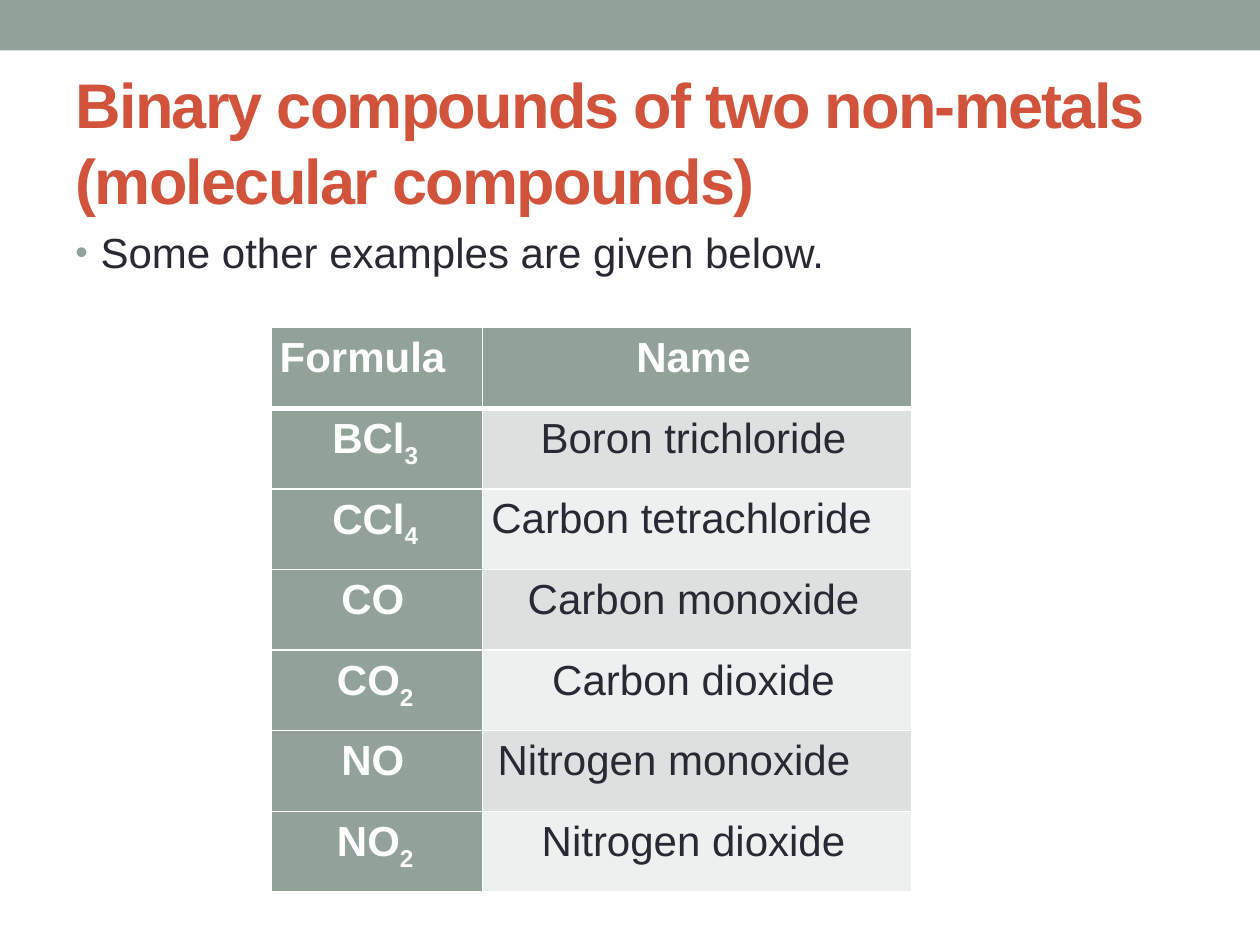
from pptx import Presentation
from pptx import util as u
from pptx.dml.color import RGBColor
from pptx.enum import shapes, text
from pptx.oxml import parse_xml
from pptx.oxml.ns import nsdecls

COLORS = {
    "sage": "93A299",
    "rust": "D2533C",
    "ink": "292934",
    "white": "FFFFFF",
    "band_dark": "DCE0DE",
    "band_light": "EEF0EF",
}
COMPOUNDS = [
    ("BCl", "3 ", "Boron trichloride "),
    ("CCl", "4 ", "Carbon tetrachloride"),
    ("CO ", "", "Carbon monoxide "),
    ("CO", "2 ", "Carbon dioxide "),
    ("NO ", "", "Nitrogen monoxide"),
    ("NO", "2 ", "Nitrogen dioxide "),
]
LEFT_ALIGNED = {"Formula", "Carbon tetrachloride", "Nitrogen monoxide"}


def rgb(name):
    return RGBColor.from_string(COLORS[name])


class SlideBuilder:
    font_name = "Arial"

    def __init__(self, presentation):
        self.slide = presentation.slides.add_slide(presentation.slide_layouts[5])

    def style(self, paragraph, size, color, bold=False):
        font = paragraph.font
        font.name = self.font_name
        font.size = u.Pt(size)
        font.bold = bold
        font.color.rgb = rgb(color)

    def bar(self, left, top, width, height, color):
        shape = self.slide.shapes.add_shape(
            shapes.MSO_SHAPE.RECTANGLE,
            u.Inches(left), u.Inches(top), u.Inches(width), u.Inches(height))
        shape.shadow.inherit = False
        shape.fill.solid()
        shape.fill.fore_color.rgb = rgb(color)
        shape.line.fill.background()

    def title(self, words, left, top, width, height):
        title = self.slide.shapes.title
        title.left, title.top = u.Inches(left), u.Inches(top)
        title.width, title.height = u.Inches(width), u.Inches(height)
        frame = title.text_frame
        frame.text = words
        frame.auto_size = text.MSO_AUTO_SIZE.NONE
        frame.vertical_anchor = text.MSO_ANCHOR.MIDDLE
        paragraph = frame.paragraphs[0]
        paragraph.alignment = text.PP_ALIGN.LEFT
        self.style(paragraph, 36, "rust", bold=True)
        paragraph.runs[0].font._element.set("spc", "-100")

    def bullet(self, words, left, top, width, height):
        box = self.slide.shapes.add_textbox(
            u.Inches(left), u.Inches(top), u.Inches(width), u.Inches(height))
        box.text_frame.word_wrap = True
        paragraph = box.text_frame.paragraphs[0]
        paragraph.text = words
        self.style(paragraph, 24, "ink")
        properties = paragraph._p.get_or_add_pPr()
        properties.set("marL", str(u.Inches(0.2)))
        properties.set("indent", str(u.Inches(-0.2)))
        marks = [
            f'<a:buClr {nsdecls("a")}><a:srgbClr val="{COLORS["sage"]}"/></a:buClr>',
            f'<a:buSzPct {nsdecls("a")} val="85000"/>',
            f'<a:buFont {nsdecls("a")} typeface="{self.font_name}"/>',
            f'<a:buChar {nsdecls("a")} char="•"/>',
        ]
        for position, mark in enumerate(marks):
            properties.insert(position, parse_xml(mark))

    def borders(self, cell, **widths):
        properties = cell._tc.get_or_add_tcPr()
        for position, side in enumerate("LRTB"):
            width = u.Pt(widths.get(side, 1))
            properties.insert(position, parse_xml(
                f'<a:ln{side} {nsdecls("a")} w="{width}"><a:solidFill>'
                f'<a:srgbClr val="{COLORS["white"]}"/></a:solidFill></a:ln{side}>'))

    def cell(self, cell, words, fill, color, bold, subscript=""):
        cell.margin_left, cell.margin_top = u.Inches(0.07), u.Inches(0.03)
        cell.margin_right, cell.margin_bottom = u.Inches(0.04), 0
        cell.fill.solid()
        cell.fill.fore_color.rgb = rgb(fill)
        paragraph = cell.text_frame.paragraphs[0]
        paragraph.line_spacing = 1.07
        paragraph.alignment = (
            text.PP_ALIGN.LEFT if words in LEFT_ALIGNED else text.PP_ALIGN.CENTER)
        paragraph.add_run().text = words
        if subscript:
            run = paragraph.add_run()
            run.text = subscript
            run.font._element.set("baseline", "-25000")
        self.style(paragraph, 24, color, bold)
        return paragraph

    def compound_table(self, left, top, column_widths, row_height):
        row_count = len(COMPOUNDS) + 1
        table = self.slide.shapes.add_table(
            row_count, len(column_widths), u.Inches(left), u.Inches(top),
            u.Inches(sum(column_widths)), u.Inches(row_height * row_count)).table
        for column, width in zip(table.columns, column_widths):
            column.width = u.Inches(width)
        for row in table.rows:
            row.height = u.Inches(row_height)
        for column, heading in enumerate(("Formula", "Name ")):
            header = table.cell(0, column)
            self.cell(header, heading, "sage", "white", True)
            self.borders(header, B=3)
        for row, (formula, subscript, name) in enumerate(COMPOUNDS, start=1):
            band = "band_dark" if row % 2 else "band_light"
            formula_cell, name_cell = table.cell(row, 0), table.cell(row, 1)
            self.cell(formula_cell, formula, "sage", "white", True, subscript)
            paragraph = self.cell(name_cell, name, band, "ink", False)
            if name == "Nitrogen monoxide":
                paragraph._p.get_or_add_pPr().set("marL", str(u.Inches(0.05)))
            for cell in (formula_cell, name_cell):
                self.borders(cell, T=3 if row == 1 else 1)


def main():
    presentation = Presentation()
    presentation.slide_width = u.Inches(10)
    presentation.slide_height = u.Inches(7.5)
    builder = SlideBuilder(presentation)
    builder.bar(0, 0, 10, 0.4, "sage")
    builder.title("Binary compounds of two non-metals (molecular compounds)",
                  0.5, 0.58, 9, 1.08)
    builder.bullet("Some other examples are given below.", 0.5, 1.75, 9, 0.5)
    builder.compound_table(2.15, 2.6, (1.68, 3.41), 0.64)
    presentation.save("out.pptx")


if __name__ == "__main__":
    main()
